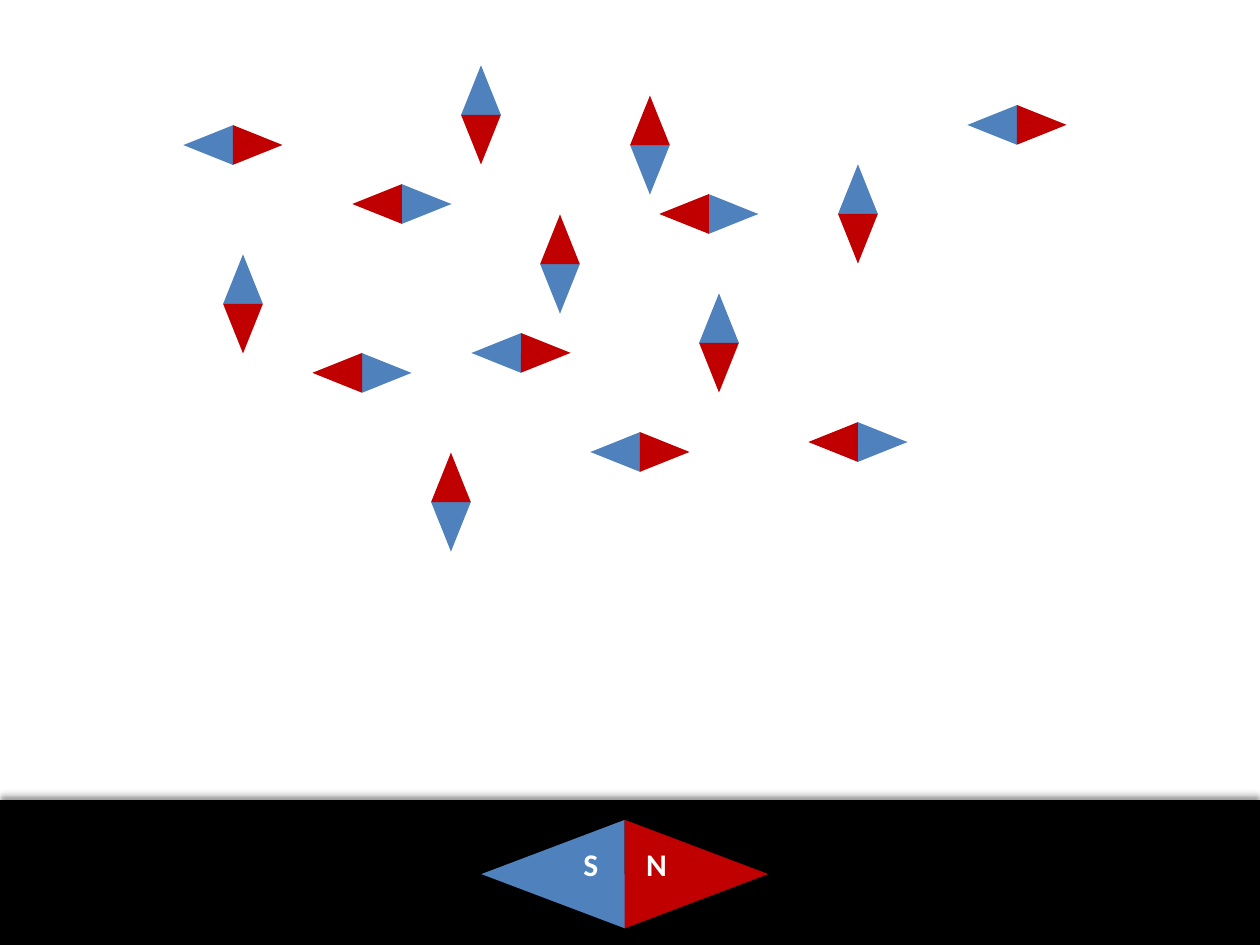
from lxml import etree
from pptx import Presentation
from pptx.dml.color import RGBColor
from pptx.enum.shapes import MSO_SHAPE
from pptx.enum.text import MSO_AUTO_SIZE
from pptx.oxml.ns import qn
from pptx.util import Pt

RT_TRIANGLE, RECT = MSO_SHAPE.RIGHT_TRIANGLE, MSO_SHAPE.RECTANGLE
GROW = MSO_AUTO_SIZE.SHAPE_TO_FIT_TEXT

COLORS = {"south": "4F81BD", "north": "C00000", "bar": "000000", "label": "FFFFFF"}
BLUE_UP, BLUE_RIGHT, BLUE_DOWN, BLUE_LEFT = 0, 90, 180, 270
NEEDLE = (22.7, 56.6)  # width across, length

# Centre x, centre y, rotation of each small needle
NEEDLES = [
    (229.7, 116.6, BLUE_RIGHT), (297.7, 201.7, BLUE_LEFT),
    (371.4, 82.9, BLUE_DOWN), (320, 150.9, BLUE_DOWN),
    (490.3, 252.6, BLUE_RIGHT), (365.7, 258.3, BLUE_LEFT),
    (410.9, 196, BLUE_UP), (490.3, 122.3, BLUE_UP),
    (581.1, 71.4, BLUE_LEFT), (405.1, 122.3, BLUE_RIGHT),
    (257.7, 286.9, BLUE_DOWN), (274.9, 65.7, BLUE_UP),
    (206.9, 213.1, BLUE_RIGHT), (133.1, 82.9, BLUE_LEFT),
    (138.9, 173.7, BLUE_UP),
]


def add_solid(shapes, kind, x, y, w, h, color):
    sp = shapes.add_shape(kind, Pt(x), Pt(y), Pt(w), Pt(h))
    sp.shadow.inherit = False
    sp.fill.solid()
    sp.fill.fore_color.rgb = RGBColor.from_string(COLORS[color])
    sp.line.fill.background()
    return sp


def add_text(s, text, x, y, w, h, size=18, color="label", font="Calibri", bold=True):
    tb = s.shapes.add_textbox(Pt(x), Pt(y), Pt(w), Pt(h))
    tf = tb.text_frame
    tf.word_wrap = False
    tf.auto_size = GROW
    r = tf.paragraphs[0].add_run()
    r.text = text
    r.font.size, r.font.bold, r.font.name = Pt(size), bold, font
    r.font.color.rgb = RGBColor.from_string(COLORS[color])


def add_needle(s, cx, cy, w, h, rotation):
    """Four right triangles around a centre, turned as one group."""
    grp = s.shapes.add_group_shape()
    for color, y, flip_v in (("south", cy - h / 2, False), ("north", cy, True)):
        for x, flip_h in ((cx, False), (cx - w / 2, True)):
            sp = add_solid(grp.shapes, RT_TRIANGLE, x, y, w / 2, h / 2, color)
            xfrm = sp._element.spPr.find(qn("a:xfrm"))
            if flip_h:
                xfrm.set("flipH", "1")
            if flip_v:
                xfrm.set("flipV", "1")
    grp.rotation = rotation


def add_upward_shadow(sp, blur, dist, alpha):
    effects = sp._element.spPr.find(qn("a:effectLst"))
    shadow = etree.SubElement(effects, qn("a:outerShdw"), blurRad=str(Pt(blur)),
                              dist=str(Pt(dist)), dir="16200000", rotWithShape="0")
    clr = etree.SubElement(shadow, qn("a:srgbClr"), val="000000")
    etree.SubElement(clr, qn("a:alpha"), val=str(alpha * 1000))


def add_legend(s, x, y, w, h):
    bar = add_solid(s.shapes, RECT, x, y, w, h, "bar")
    add_upward_shadow(bar, blur=4, dist=3, alpha=40)
    add_needle(s, x + 357, y + 42.3, 62, 164, BLUE_LEFT)
    add_text(s, "S", x + 326.2, y + 22.3, 23, 29)
    add_text(s, "N", x + 362.2, y + 22.3, 26.6, 29)


def main():
    prs = Presentation()
    prs.slide_width, prs.slide_height = Pt(720), Pt(540)
    s = prs.slides.add_slide(prs.slide_layouts[6])

    # Scattered needles
    for cx, cy, rotation in NEEDLES:
        add_needle(s, cx, cy, *NEEDLE, rotation)

    # Legend bar
    add_legend(s, 0, 457.2, 720, 82.8)

    prs.save("out.pptx")


if __name__ == "__main__":
    main()
